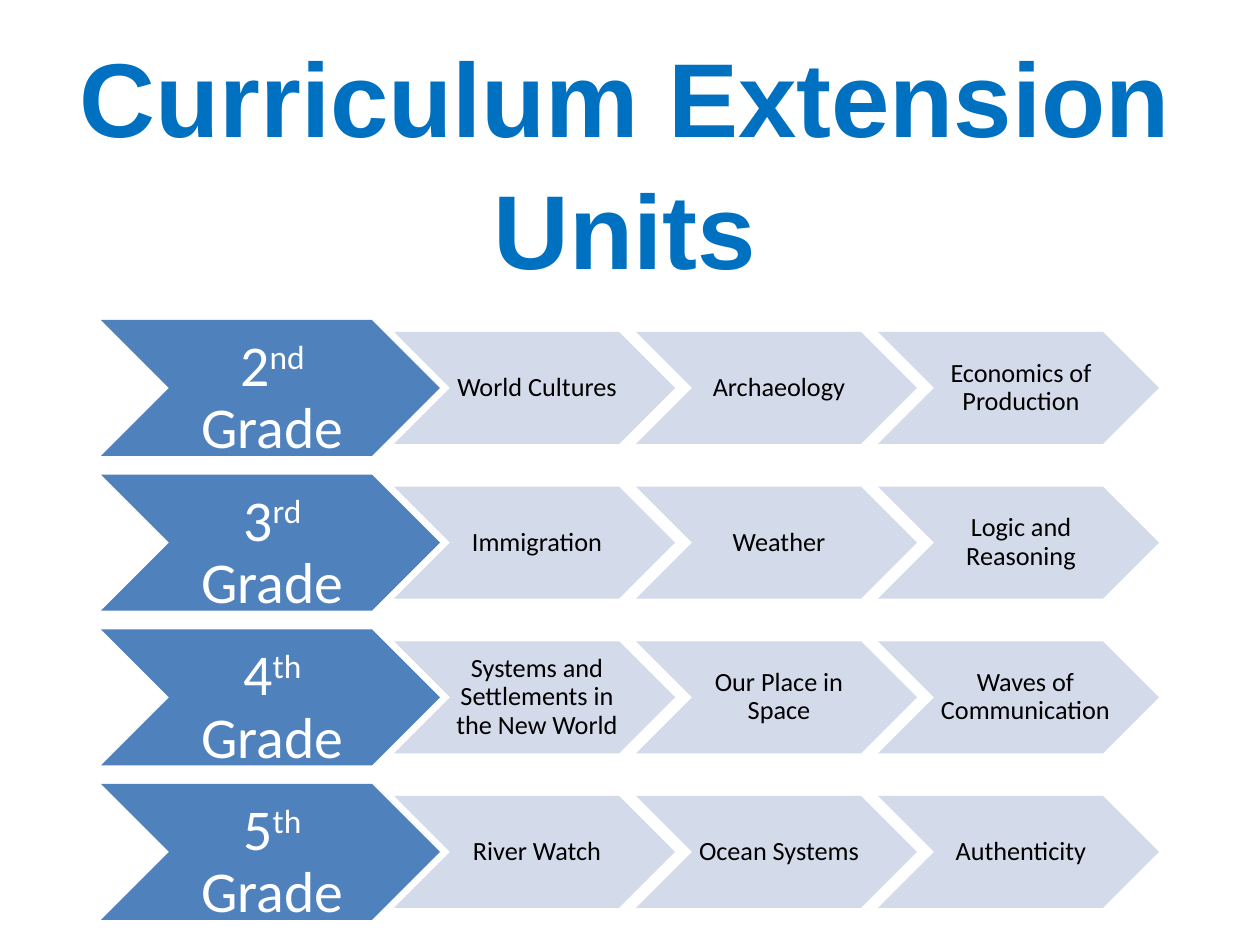
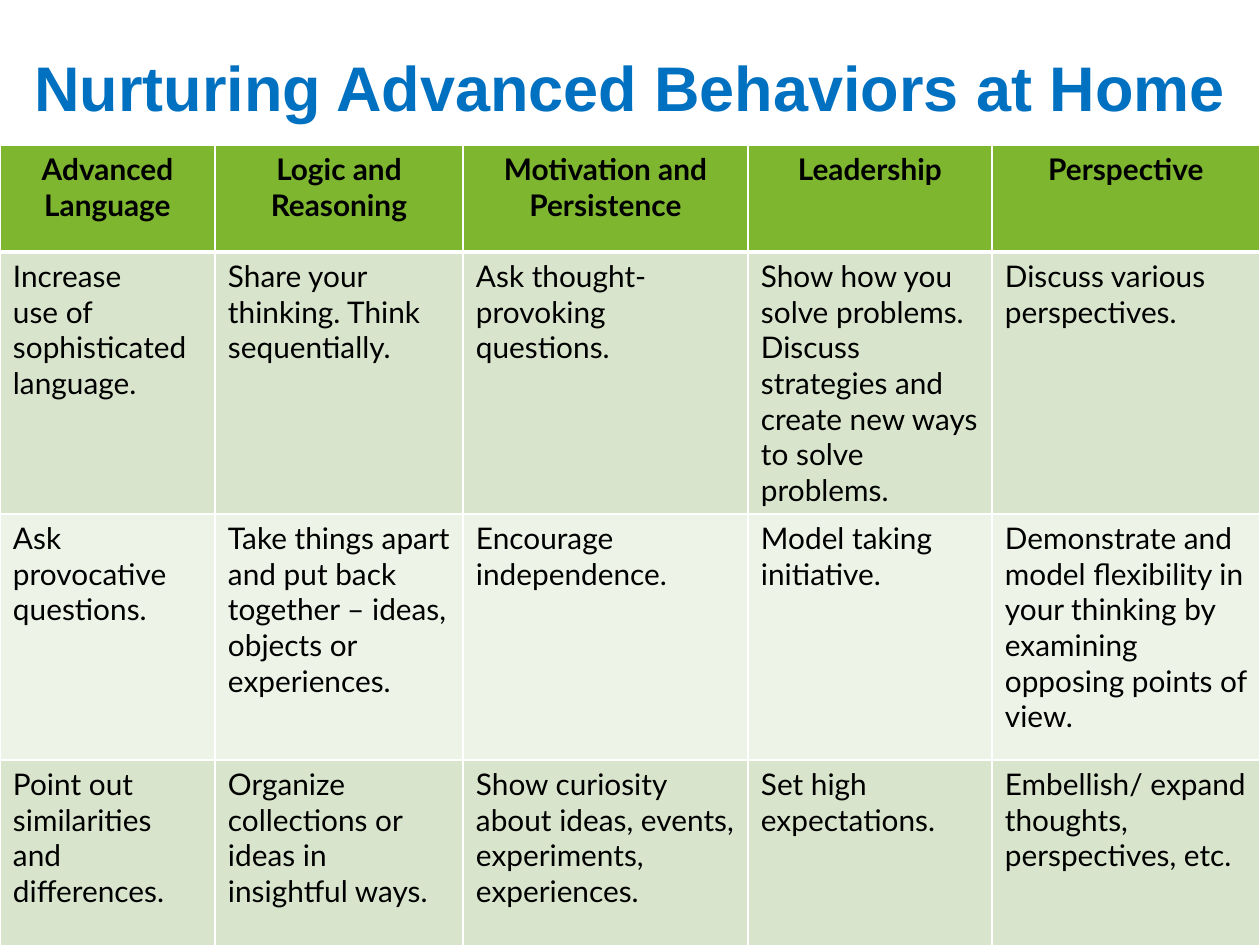
from lxml.etree import SubElement
from pptx import Presentation
from pptx.dml.color import RGBColor
from pptx.enum.shapes import MSO_SHAPE
from pptx.enum.text import MSO_ANCHOR, MSO_AUTO_SIZE, PP_ALIGN
from pptx.oxml.ns import qn
from pptx.util import Pt

UNITS_TITLE = "Curriculum Extension Units"
GRADES = [
    ("2", "nd", ["World Cultures", "Archaeology", "Economics of Production"]),
    ("3", "rd", ["Immigration", "Weather", "Logic and Reasoning"]),
    ("4", "th", ["Systems and Settlements in the New World", "Our Place in Space",
                 "Waves of Communication"]),
    ("5", "th", ["River Watch", "Ocean Systems", "Authenticity"]),
]

HOME_TITLE = "Nurturing Advanced Behaviors at Home"
BEHAVIORS = [
    ["Advanced Language", "Logic and Reasoning", "Motivation and Persistence",
     "Leadership", "Perspective"],
    ["Increase\nuse of sophisticated language.",
     "Share your thinking. Think sequentially.",
     "Ask thought-\nprovoking questions.",
     "Show how you solve problems. Discuss strategies and create new ways to solve problems.",
     "Discuss various perspectives."],
    ["Ask provocative questions.",
     "Take things apart and put back together – ideas, objects or experiences.",
     "Encourage independence.",
     "Model taking initiative.",
     "Demonstrate and model flexibility in your thinking by examining opposing points of view."],
    ["Point out similarities and differences.",
     "Organize collections or ideas in insightful ways.",
     "Show curiosity about ideas, events, experiments, experiences.",
     "Set high expectations.",
     "Embellish/ expand thoughts, perspectives, etc."],
]
COLUMN_WIDTHS = [215, 248, 285, 244, 268]
ROW_HEIGHTS = [107, 232, 246, 195]
TABLE_TOP = 145

TITLE_BLUE, GRADE_BLUE, UNIT_BLUE = "0070C0", "4F81BD", "CFD7E7"
HEADER_GREEN, ROW_GREENS = "7FB62F", ["D8E5CC", "EDF3E7"]
BLACK, WHITE = "000000", "FFFFFF"

FIRST_ROW, LAST_ROW = 320, 784
GRADE_LEFT, GRADE_WIDTH, GRADE_HEIGHT = 101, 339, 136
UNIT_LEFT, UNIT_STEP, UNIT_WIDTH, UNIT_HEIGHT = 394, 242, 281, 112


def px(length):
    return round(length * 914400 / 126)


def color(value):
    return RGBColor.from_string(value)


def style(para, name, size, ink, bold=False):
    for span in para.runs:
        span.font.name = name
        span.font.size = Pt(size)
        span.font.bold = bold
        span.font.color.rgb = color(ink)


def set_margins(frame, left, top, right, bottom):
    frame.margin_left, frame.margin_top = px(left), px(top)
    frame.margin_right, frame.margin_bottom = px(right), px(bottom)


def add_page(deck, title, area, size, top_margin):
    page = deck.slides.add_slide(deck.slide_layouts[5])
    box = page.shapes.title
    box.left, box.top, box.width, box.height = map(px, area)
    frame = box.text_frame
    frame.text = title
    frame.auto_size = MSO_AUTO_SIZE.NONE
    frame.vertical_anchor = MSO_ANCHOR.TOP
    set_margins(frame, 13, top_margin, 13, 6)
    para = frame.paragraphs[0]
    para.alignment = PP_ALIGN.CENTER
    para.line_spacing = 1.05
    style(para, "Arial", size, TITLE_BLUE, True)
    return page


def add_chevron(page, left, top, width, height, fill, opacity=100):
    shape = page.shapes.add_shape(MSO_SHAPE.CHEVRON, *map(px, (left, top, width, height)))
    shape.adjustments[0] = 0.5
    shape.shadow.inherit = False
    shape.fill.solid()
    shape.fill.fore_color.rgb = color(fill)
    shape.line.fill.background()
    if opacity < 100:
        tint = shape.fill._xPr.find(".//" + qn("a:srgbClr"))
        SubElement(tint, qn("a:alpha")).set("val", str(opacity * 1000))


def add_label(page, area, parts, size, ink, margins, space_after):
    box = page.shapes.add_textbox(*map(px, area))
    frame = box.text_frame
    frame.word_wrap = True
    frame.vertical_anchor = MSO_ANCHOR.MIDDLE
    set_margins(frame, *margins)
    para = frame.paragraphs[0]
    para.alignment = PP_ALIGN.CENTER
    para.line_spacing = 0.9
    para.space_after = Pt(space_after)
    for part in parts:
        para.add_run().text = part
    style(para, "Calibri", size, ink)
    return para


def add_grade_row(page, top, number, suffix, units):
    add_chevron(page, GRADE_LEFT, top, GRADE_WIDTH, GRADE_HEIGHT, GRADE_BLUE)
    para = add_label(page, (GRADE_LEFT + 67, top + 11, 203, GRADE_HEIGHT),
                     [number, suffix, " Grade"], 33, WHITE, (6, 3, 0, 3), 11.6)
    para.runs[1]._r.get_or_add_rPr().set("baseline", "30000")
    unit_top = top + (GRADE_HEIGHT - UNIT_HEIGHT) / 2
    for index, unit in enumerate(units):
        left = UNIT_LEFT + index * UNIT_STEP
        add_chevron(page, left, unit_top, UNIT_WIDTH, UNIT_HEIGHT, UNIT_BLUE, 90)
        label_width = 178 if "Communication" in unit else 169
        add_label(page, (left + 57, unit_top, label_width, UNIT_HEIGHT),
                  [unit], 15, BLACK, (3, 1, 0, 1), 5.2)


def add_borders(cell, row):
    widths = {"lnL": 1, "lnR": 1, "lnT": 3 if row == 1 else 1, "lnB": 3 if row == 0 else 1}
    for side, width in widths.items():
        line = SubElement(cell._tc.get_or_add_tcPr(), qn("a:" + side), w=str(Pt(width)))
        fill = SubElement(line, qn("a:solidFill"))
        SubElement(fill, qn("a:srgbClr"), val=WHITE)


def add_behavior_table(page):
    area = (0, TABLE_TOP, sum(COLUMN_WIDTHS), sum(ROW_HEIGHTS))
    table = page.shapes.add_table(len(ROW_HEIGHTS), len(COLUMN_WIDTHS), *map(px, area)).table
    for column, width in zip(table.columns, COLUMN_WIDTHS):
        column.width = px(width)
    for row, texts in enumerate(BEHAVIORS):
        table.rows[row].height = px(ROW_HEIGHTS[row])
        is_header = row == 0
        for column, text in enumerate(texts):
            cell = table.cell(row, column)
            add_borders(cell, row)
            cell.fill.solid()
            cell.fill.fore_color.rgb = color(HEADER_GREEN if is_header else ROW_GREENS[(row - 1) % 2])
            set_margins(cell, 13, 6, 13, 6)
            cell.text_frame.text = text
            for para in cell.text_frame.paragraphs:
                para.alignment = PP_ALIGN.CENTER if is_header else PP_ALIGN.LEFT
                style(para, "Lato", 17, BLACK, is_header)


def main():
    deck = Presentation()
    deck.slide_width, deck.slide_height = px(1260), px(945)

    page = add_page(deck, UNITS_TITLE, (0, 11, 1250, 189), 60, 15)
    row_step = (LAST_ROW - FIRST_ROW) / (len(GRADES) - 1)
    for index, grade in enumerate(GRADES):
        add_grade_row(page, FIRST_ROW + index * row_step, *grade)

    page = add_page(deck, HOME_TITLE, (0, 34, 1260, 126), 36, 11)
    add_behavior_table(page)
    deck.save("out.pptx")


if __name__ == "__main__":
    main()
